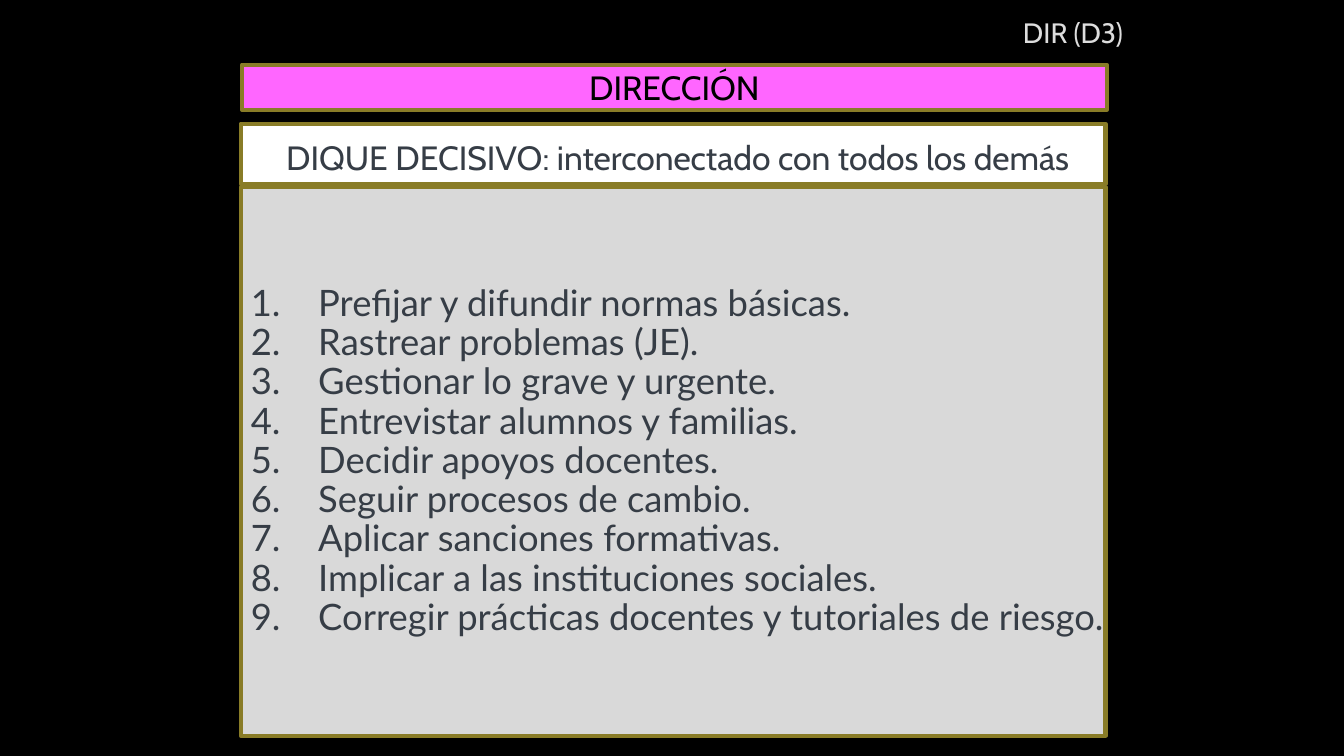
from lxml.etree import SubElement
from pptx import Presentation
from pptx.dml.color import RGBColor
from pptx.enum.shapes import MSO_SHAPE as Shape
from pptx.enum.text import MSO_ANCHOR as Anchor, MSO_AUTO_SIZE as AutoSize, PP_ALIGN as Align
from pptx.oxml.ns import qn
from pptx.util import Cm, Pt

CODE = "DIR (D3)"
HEADING = "DIRECCIÓN"
SUBHEADING = "DIQUE DECISIVO: interconectado con todos los demás"
TASKS = [
    "Prefijar y difundir normas básicas.",
    "Rastrear problemas (JE).",
    "Gestionar lo grave y urgente.",
    "Entrevistar alumnos y familias.",
    "Decidir apoyos docentes.",
    "Seguir procesos de cambio.",
    "Aplicar sanciones formativas.",
    "Implicar a las instituciones sociales.",
    "Corregir prácticas docentes y tutoriales de riesgo.",
]
BLACK, WHITE, SILVER, SLATE = "000000", "FFFFFF", "DDDDDD", "363D46"
GREY, PINK, OLIVE = "D9D9D9", "FF66FF", "897C27"
LEFT, WIDTH = 6.07, 21.79
INDENT = 1.7


def color(value):
    return RGBColor.from_string(value)


def place(box, left, top, width, height):
    box.left, box.top, box.width, box.height = map(Cm, (left, top, width, height))


def number(para):
    """Turn a paragraph into an automatically numbered item."""
    props = para._p.get_or_add_pPr()
    props.set("marL", str(Cm(INDENT)))
    props.set("indent", str(-Cm(INDENT)))
    SubElement(props, qn("a:buFont"), typeface="+mj-lt")
    SubElement(props, qn("a:buAutoNum"), type="arabicPeriod")


def write(box, lines, size, ink, font="Cabin", align=Align.LEFT,
          margins=(0.25, 0.13, 0.25, 0.13), numbered=False, spacing=1.0):
    """Fill a box with text; margins are left, top, right, bottom in cm."""
    frame = box.text_frame
    frame.auto_size = AutoSize.NONE
    frame.word_wrap = True
    frame.vertical_anchor = Anchor.MIDDLE
    (frame.margin_left, frame.margin_top,
     frame.margin_right, frame.margin_bottom) = map(Cm, margins)
    frame.text = "\n".join(lines)
    for para in frame.paragraphs:
        if numbered:
            number(para)
        para.alignment = align
        para.line_spacing = spacing
        para.space_before = Pt(0)
        para.font.size = Pt(size)
        para.font.name = font
        para.font.color.rgb = color(ink)


def frame_box(box, fill):
    """Give a box its fill and the olive border."""
    box.fill.solid()
    box.fill.fore_color.rgb = color(fill)
    box.line.color.rgb = color(OLIVE)
    box.line.width = Pt(3)


def add_band(page, top, height, fill, left=LEFT):
    band = page.shapes.add_shape(Shape.RECTANGLE, Cm(left), Cm(top), Cm(WIDTH), Cm(height))
    band.shadow.inherit = False
    frame_box(band, fill)
    return band


def main():
    deck = Presentation()
    deck.slide_width, deck.slide_height = Cm(33.87), Cm(19.05)
    page = deck.slides.add_slide(deck.slide_layouts[1])
    page.background.fill.solid()
    page.background.fill.fore_color.rgb = color(BLACK)

    title, body = page.placeholders
    place(title, 25.53, 0.13, 3.86, 1.35)
    write(title, [CODE], 20, SILVER)

    place(body, LEFT, 4.72, WIDTH, 13.82)
    frame_box(body, GREY)
    write(body, TASKS, 26, SLATE, font="Lato", numbered=True, spacing=0.9,
          margins=(0.25, 0.13, 0, 0.13))

    subheading = add_band(page, 3.12, 1.52, WHITE)
    write(subheading, [SUBHEADING], 24, SLATE, align=Align.CENTER,
          margins=(0.48, 0.28, 0.25, 0.13))

    heading = add_band(page, 1.63, 1.14, PINK, left=6.1)
    write(heading, [HEADING], 24, BLACK, align=Align.CENTER)

    deck.save("out.pptx")


if __name__ == "__main__":
    main()
